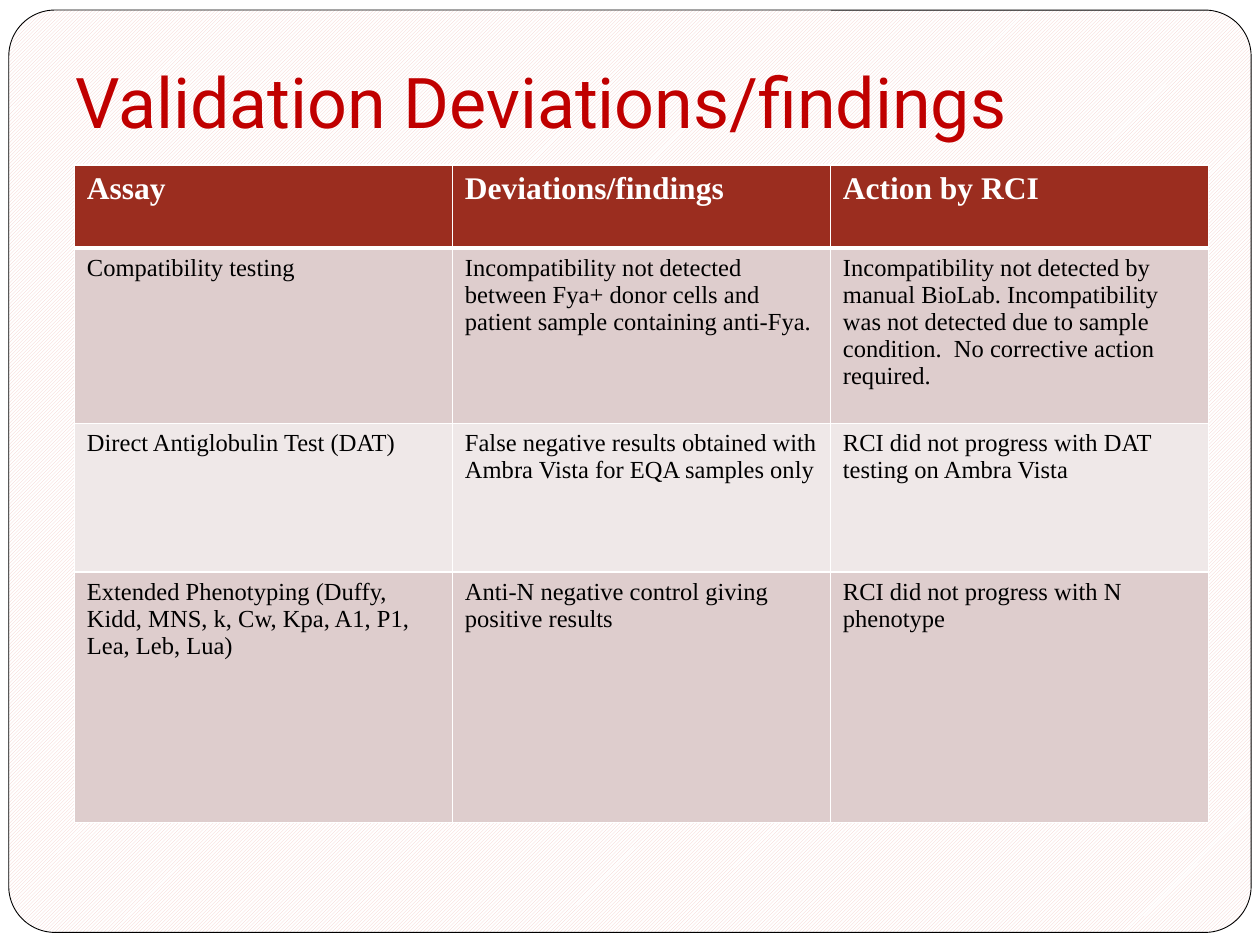
from dataclasses import dataclass
from lxml import etree
from pptx import Presentation
from pptx.dml.color import RGBColor
from pptx.enum import dml, shapes, text
from pptx.oxml.ns import qn
from pptx.util import Inches, Pt


@dataclass(frozen=True)
class Theme:
    white: str = "FFFFFF"
    black: str = "000000"
    hatch: str = "F4CEC9"
    title: str = "C00000"
    head: str = "9B2D1F"
    dark: str = "DECDCD"
    light: str = "EFE8E8"
    big: int = 40
    mid: int = 18
    small: int = 14
    sans: str = "Roboto"
    serif: str = "Times New Roman"


@dataclass(frozen=True)
class Row:
    height: float
    fill: str
    cells: tuple[str, str, str]
    head: bool = False


T = Theme()
ROWS = (
    Row(0.66, T.head, ("Assay", "Deviations/findings", "Action by RCI"), True),
    Row(1.39, T.dark, (
        "Compatibility testing",
        "Incompatibility not detected between Fya+ donor cells and patient sample containing anti-Fya.",
        "Incompatibility not detected by manual BioLab. Incompatibility was not detected due to sample "
        "condition.  No corrective action required.")),
    Row(1.18, T.light, (
        "Direct Antiglobulin Test (DAT)",
        "False negative results obtained with Ambra Vista for EQA samples only",
        "RCI did not progress with DAT testing on Ambra Vista")),
    Row(1.99, T.dark, (
        "Extended Phenotyping (Duffy, Kidd, MNS, k, Cw, Kpa, A1, P1, Lea, Leb, Lua)",
        "Anti-N negative control giving positive results",
        "RCI did not progress with N phenotype")),
)


def rgb(code: str) -> RGBColor:
    return RGBColor.from_string(code)


def write(frame, words: str, *, size: int, font: str, color: str, bold: bool = False) -> None:
    para = frame.paragraphs[0]
    para.alignment = text.PP_ALIGN.LEFT
    run = para.add_run()
    run.text = words
    run.font.size = Pt(size)
    run.font.name = font
    run.font.bold = bold
    run.font.color.rgb = rgb(color)


def hatch(fill) -> None:
    fill.patterned()
    fill.pattern = dml.MSO_PATTERN.LIGHT_UPWARD_DIAGONAL
    fill.fore_color.rgb = rgb(T.hatch)
    fill.back_color.rgb = rgb(T.white)


def panel(slide, kind, x: float, y: float, w: float, h: float):
    shape = slide.shapes.add_shape(kind, Inches(x), Inches(y), Inches(w), Inches(h))
    shape.shadow.inherit = False
    shape.line.fill.background()
    return shape


def border(cell, widths: dict[str, int]) -> None:
    props = cell._tc.get_or_add_tcPr()
    for side in ("L", "R", "T", "B"):
        line = etree.SubElement(props, qn(f"a:ln{side}"), w=str(Pt(widths.get(side, 1))))
        fill = etree.SubElement(line, qn("a:solidFill"))
        etree.SubElement(fill, qn("a:srgbClr"), val=T.white)


def backdrop(slide) -> None:
    hatch(slide.background.fill)
    sheet = panel(slide, shapes.MSO_SHAPE.RECTANGLE, 0, 0, 10, 7.5)
    sheet.fill.solid()
    sheet.fill.fore_color.rgb = rgb(T.white)
    card = panel(slide, shapes.MSO_SHAPE.ROUNDED_RECTANGLE, 0.07, 0.08, 9.86, 7.32)
    card.adjustments[0] = 0.05
    hatch(card.fill)
    card.line.color.rgb = rgb(T.black)
    card.line.width = Pt(0.5)
    title = slide.shapes.title._element
    title.addprevious(sheet._element)
    title.addprevious(card._element)


def heading(slide, words: str) -> None:
    title = slide.shapes.title
    title.left, title.top, title.width, title.height = map(Inches, (0.5, 0.3, 9, 0.93))
    frame = title.text_frame
    frame.vertical_anchor = text.MSO_ANCHOR.BOTTOM
    frame.auto_size = text.MSO_AUTO_SIZE.NONE
    frame.margin_bottom = Inches(0.1)
    write(frame, words, size=T.big, font=T.sans, color=T.title)


def grid(slide, rows: tuple[Row, ...]) -> None:
    high = sum(row.height for row in rows)
    table = slide.shapes.add_table(
        len(rows), 3, Inches(0.59), Inches(1.31), Inches(9), Inches(high)).table
    for i, row in enumerate(rows):
        table.rows[i].height = Inches(row.height)
        for j, words in enumerate(row.cells):
            cell = table.cell(i, j)
            border(cell, {"B": 3} if row.head else {"T": 3} if i == 1 else {})
            cell.fill.solid()
            cell.fill.fore_color.rgb = rgb(row.fill)
            write(cell.text_frame, words, size=T.mid if row.head else T.small,
                  font=T.serif, color=T.white if row.head else T.black, bold=row.head)


def main() -> None:
    deck = Presentation()
    deck.slide_width, deck.slide_height = Inches(10), Inches(7.5)
    slide = deck.slides.add_slide(deck.slide_layouts[5])
    backdrop(slide)
    heading(slide, "Validation Deviations/findings")
    grid(slide, ROWS)
    deck.save("out.pptx")


if __name__ == "__main__":
    main()
